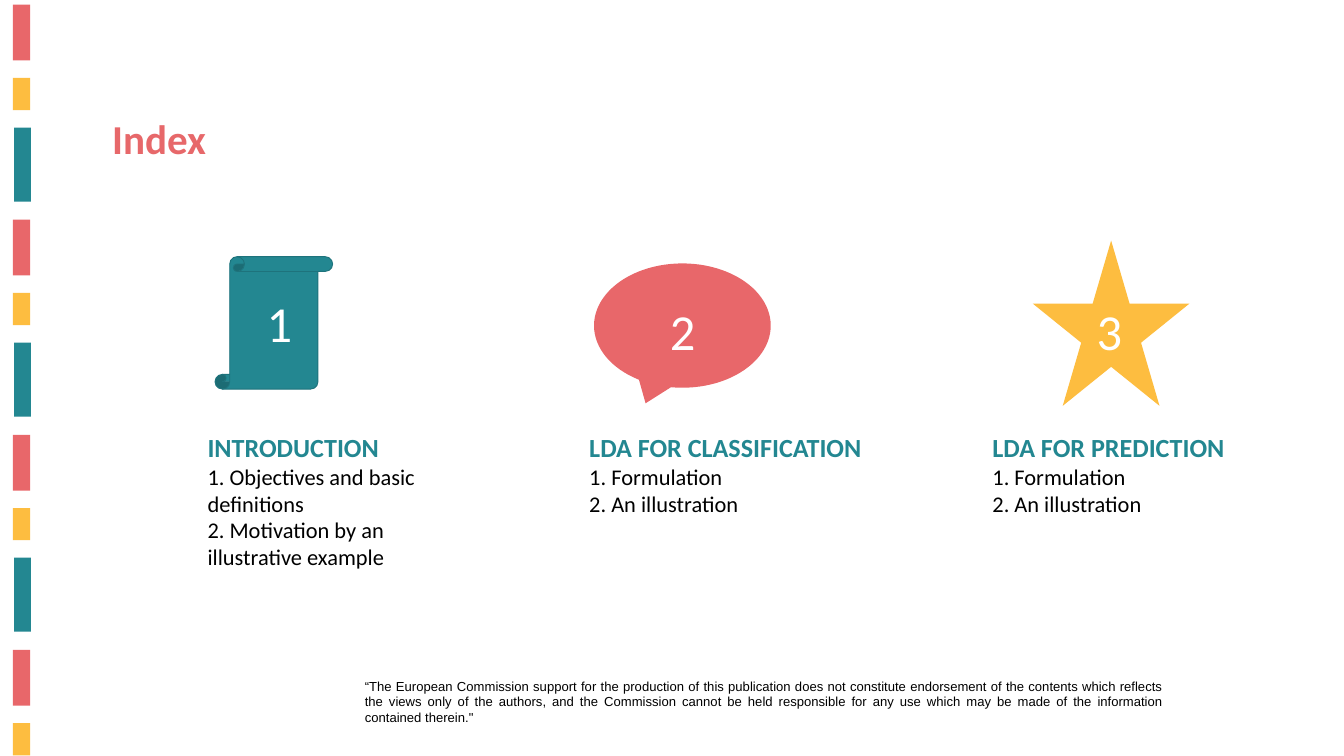
"""Build the index slide with three numbered sections."""
from pptx import Presentation
from pptx.dml.color import RGBColor
from pptx.enum.shapes import MSO_SHAPE
from pptx.enum.text import MSO_ANCHOR, PP_ALIGN
from pptx.util import Inches, Pt

TEAL, CORAL, YELLOW = "238791", "E8676A", "FDBD40"


def color(value):
    return RGBColor.from_string(value)


def write(box, text, size, ink="000000", bold=False, font="Calibri",
          align=PP_ALIGN.LEFT, append=False):
    frame = box.text_frame
    frame.word_wrap = True
    frame.vertical_anchor = MSO_ANCHOR.TOP
    para = frame.add_paragraph() if append else frame.paragraphs[0]
    para.alignment = align
    span = para.add_run()
    span.text = text
    span.font.name = font
    span.font.size = Pt(size)
    span.font.bold = bold
    span.font.color.rgb = color(ink)


deck = Presentation()
deck.slide_width, deck.slide_height = Inches(20), Inches(11.25)
page = deck.slides.add_slide(deck.slide_layouts[5])

stripes = [(0.19, 0.07, 0.26, 0.83, CORAL),
           (0.19, 1.16, 0.26, 0.48, YELLOW),
           (0.21, 1.9, 0.25, 1.1, TEAL)]
for index in range(11):
    cycle, kind = divmod(index, len(stripes))
    left, top, width, height, fill = stripes[kind]
    stripe = page.shapes.add_shape(
        MSO_SHAPE.RECTANGLE, Inches(left), Inches(top + 3.2 * cycle),
        Inches(width), Inches(height))
    stripe.shadow.inherit = False
    stripe.fill.solid()
    stripe.fill.fore_color.rgb = color(fill)
    stripe.line.fill.background()

title = page.shapes.title
title.left, title.top = Inches(1.57), Inches(1.64)
title.width, title.height = Inches(6.77), Inches(1.58)
write(title, "Index", 44, "E7686A", bold=True)

sections = [
    (MSO_SHAPE.VERTICAL_SCROLL, (3.2, 3.82, 1.75, 1.97), TEAL, "1E737C",
     (3.87, 4.3, 1.58, 1.01), (2.99, 6.37, 3.42, 3.3), "INTRODUCTION",
     ["1. Objectives and basic definitions",
      "2. Motivation by an illustrative example"]),
    (MSO_SHAPE.OVAL_CALLOUT, (8.84, 3.92, 2.63, 1.85), CORAL, None,
     (9.87, 4.41, 1.08, 1.01), (8.67, 6.37, 4.55, 2.09),
     "LDA FOR CLASSIFICATION", ["1. Formulation", "2. An illustration"]),
    (MSO_SHAPE.STAR_5_POINT, (15.37, 3.58, 2.33, 2.46), YELLOW, None,
     (16.22, 4.41, 1.5, 1.01), (14.67, 6.37, 4.9, 1.78),
     "LDA FOR PREDICTION", ["1. Formulation", "2. An illustration"]),
]
for number, section in enumerate(sections, 1):
    preset, icon_place, fill, outline, number_place, text_place, heading, items = section
    icon = page.shapes.add_shape(preset, *map(Inches, icon_place))
    icon.shadow.inherit = False
    icon.fill.solid()
    icon.fill.fore_color.rgb = color(fill)
    if outline:
        icon.line.color.rgb = color(outline)
        icon.line.width = Pt(1)
    else:
        icon.line.fill.background()

    number_box = page.shapes.add_textbox(*map(Inches, number_place))
    write(number_box, str(number), 54, "FFFFFF")

    section_box = page.shapes.add_textbox(*map(Inches, text_place))
    write(section_box, heading, 28, TEAL, bold=True)
    for item in items:
        write(section_box, item, 24, append=True)

disclaimer = page.shapes.add_textbox(
    Inches(5.33), Inches(10.04), Inches(12.08), Inches(0.81))
write(disclaimer,
      "“The European Commission support for the production of this publication "
      "does not constitute endorsement of the contents which reflects the views "
      "only of the authors, and the Commission cannot be held responsible for any "
      "use which may be made of the information contained therein.\"",
      14, font="Arial", align=PP_ALIGN.JUSTIFY)

deck.save("out.pptx")
